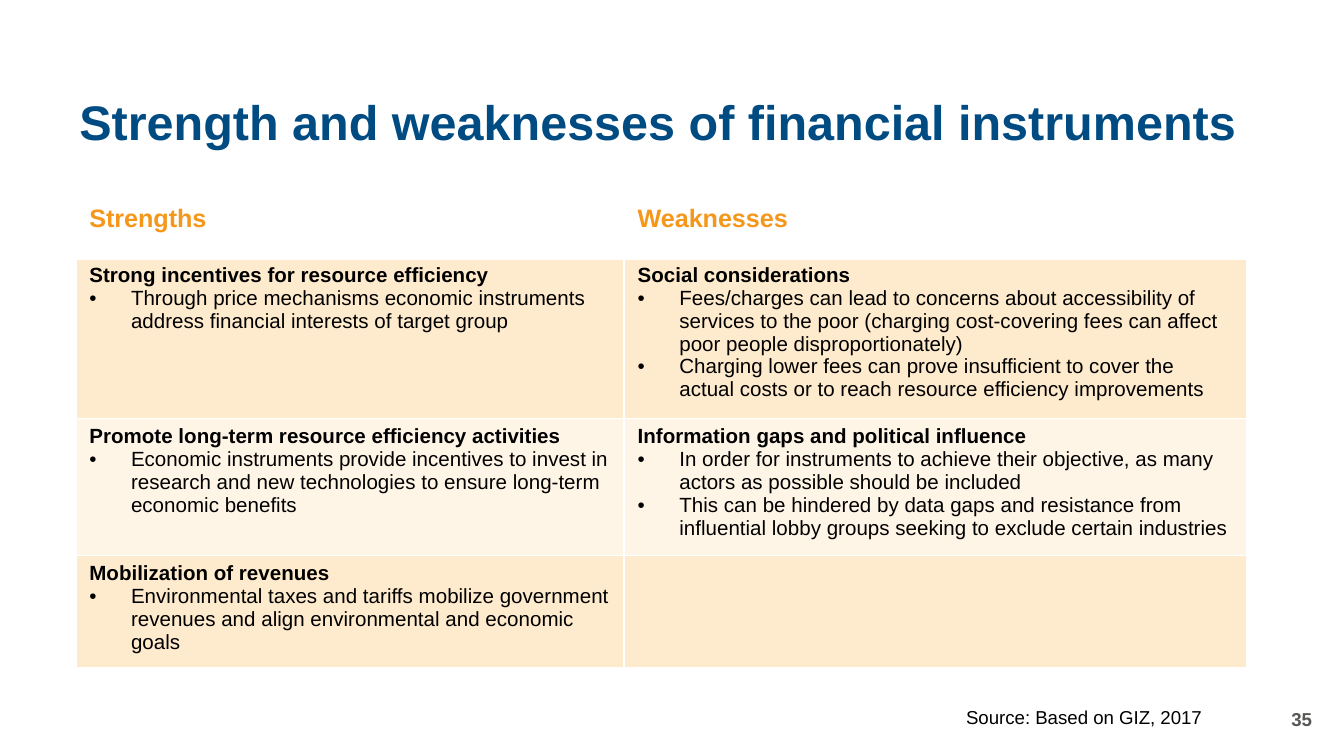
import pptx
import pptx.util
import pptx.dml.color
import pptx.enum.text
import pptx.oxml
import pptx.oxml.ns

RGB = pptx.dml.color.RGBColor
BLUE = RGB(0x00, 0x4C, 0x82)
ORANGE = RGB(0xF4, 0x97, 0x1A)
BLACK = RGB(0x00, 0x00, 0x00)
GREY = RGB(0x57, 0x57, 0x56)
PEACH = RGB(0xFE, 0xEA, 0xCC)
CREAM = RGB(0xFF, 0xF5, 0xE7)

Pt = pptx.util.Pt
ALIGN = pptx.enum.text.PP_ALIGN
MIDDLE = pptx.enum.text.MSO_ANCHOR.MIDDLE
NS = pptx.oxml.ns.nsdecls("a")

deck = pptx.Presentation()
deck.slide_width = pptx.util.Inches(10)
deck.slide_height = deck.slide_width * 9 // 16
COL = deck.slide_width / 100
ROW = deck.slide_height / 100
slide = deck.slides.add_slide(deck.slide_layouts[5])


def area(left, top, width, height):
    """Turn percentages of the slide into a left, top, width, height list."""
    return [round(n * unit) for n, unit in
            zip((left, top, width, height), (COL, ROW, COL, ROW))]


def style(para, size, color, bold=False):
    font = para.font
    font.name, font.size, font.bold = "Arial", Pt(size), bold
    font.color.rgb = color


# Title
title = slide.shapes.title
title.left, title.top, title.width, title.height = area(4.9, 11.25, 93.7, 10.5)
frame = title.text_frame
frame.text = "Strength and weaknesses of financial instruments"
frame.auto_size = pptx.enum.text.MSO_AUTO_SIZE.NONE
frame.vertical_anchor = MIDDLE
para = frame.paragraphs[0]
para.alignment = ALIGN.LEFT
para.line_spacing = 0.9
style(para, 26, BLUE, True)

# Page number
frame = slide.shapes.add_textbox(*area(76.1, 92.5, 22.5, 5.3)).text_frame
frame.word_wrap = True
frame.vertical_anchor = MIDDLE
frame.text = "35"
frame.paragraphs[0].alignment = ALIGN.RIGHT
style(frame.paragraphs[0], 10, GREY, True)

# Table: each cell is a heading followed by its bullets
rows = [
    (["Strengths"], ["Weaknesses"]),
    (["Strong incentives for resource efficiency",
      "Through price mechanisms economic instruments address financial "
      "interests of target group"],
     ["Social considerations",
      "Fees/charges can lead to concerns about accessibility of services to "
      "the poor (charging cost-covering fees can affect poor people "
      "disproportionately)",
      "Charging lower fees can prove insufficient to cover the actual costs "
      "or to reach resource efficiency improvements"]),
    (["Promote long-term resource efficiency activities",
      "Economic instruments provide incentives to invest in research and new "
      "technologies to ensure long-term economic benefits"],
     ["Information gaps and political influence",
      "In order for instruments to achieve their objective, as many actors "
      "as possible should be included",
      "This can be hindered by data gaps and resistance from influential "
      "lobby groups seeking to exclude certain industries"]),
    (["Mobilization of revenues",
      "Environmental taxes and tariffs mobilize government revenues and "
      "align environmental and economic goals"],
     []),
]
widths = [40.8, 46.3]
heights = [7.83, 11.56, 14.76, 11.56]
table = slide.shapes.add_table(
    len(rows), 2, *area(5.65, 26.2, sum(widths), sum(heights))).table
table.first_row = table.horz_banding = False
for col, width in zip(table.columns, widths):
    col.width = round(width * COL)
for row, height in zip(table.rows, heights):
    row.height = round(height * ROW)

indent = pptx.util.Inches(0.31)
for r, row in enumerate(rows):
    for c, lines in enumerate(row):
        cell = table.cell(r, c)
        if r == 0:
            props = cell._tc.get_or_add_tcPr()
            for side in "LRTB":
                line = Pt(3 if side == "B" else 1)
                props.append(pptx.oxml.parse_xml(
                    f'<a:ln{side} {NS} w="{line}"><a:solidFill>'
                    f'<a:srgbClr val="FFFFFF"/></a:solidFill></a:ln{side}>'))
            cell.fill.background()
        else:
            cell.fill.solid()
            cell.fill.fore_color.rgb = PEACH if r % 2 else CREAM

        frame = cell.text_frame
        for i, line in enumerate(lines):
            para = frame.add_paragraph() if i else frame.paragraphs[0]
            para.text = line
            if i:
                props = para._p.get_or_add_pPr()
                props.set("marL", str(indent))
                props.set("indent", str(-indent))
                props.append(pptx.oxml.parse_xml(
                    f'<a:buFont {NS} typeface="Arial"/>'))
                props.append(pptx.oxml.parse_xml(
                    f'<a:buChar {NS} char="•"/>'))
            if r == 0:
                style(para, 13.5, ORANGE, True)
            else:
                style(para, 11, BLACK, i == 0)

# Source line
frame = slide.shapes.add_textbox(*area(70.9, 92.5, 19.7, 4.8)).text_frame
frame.word_wrap = False
frame.text = "Source: Based on GIZ, 2017"
style(frame.paragraphs[0], 10, BLACK)

deck.save("out.pptx")
